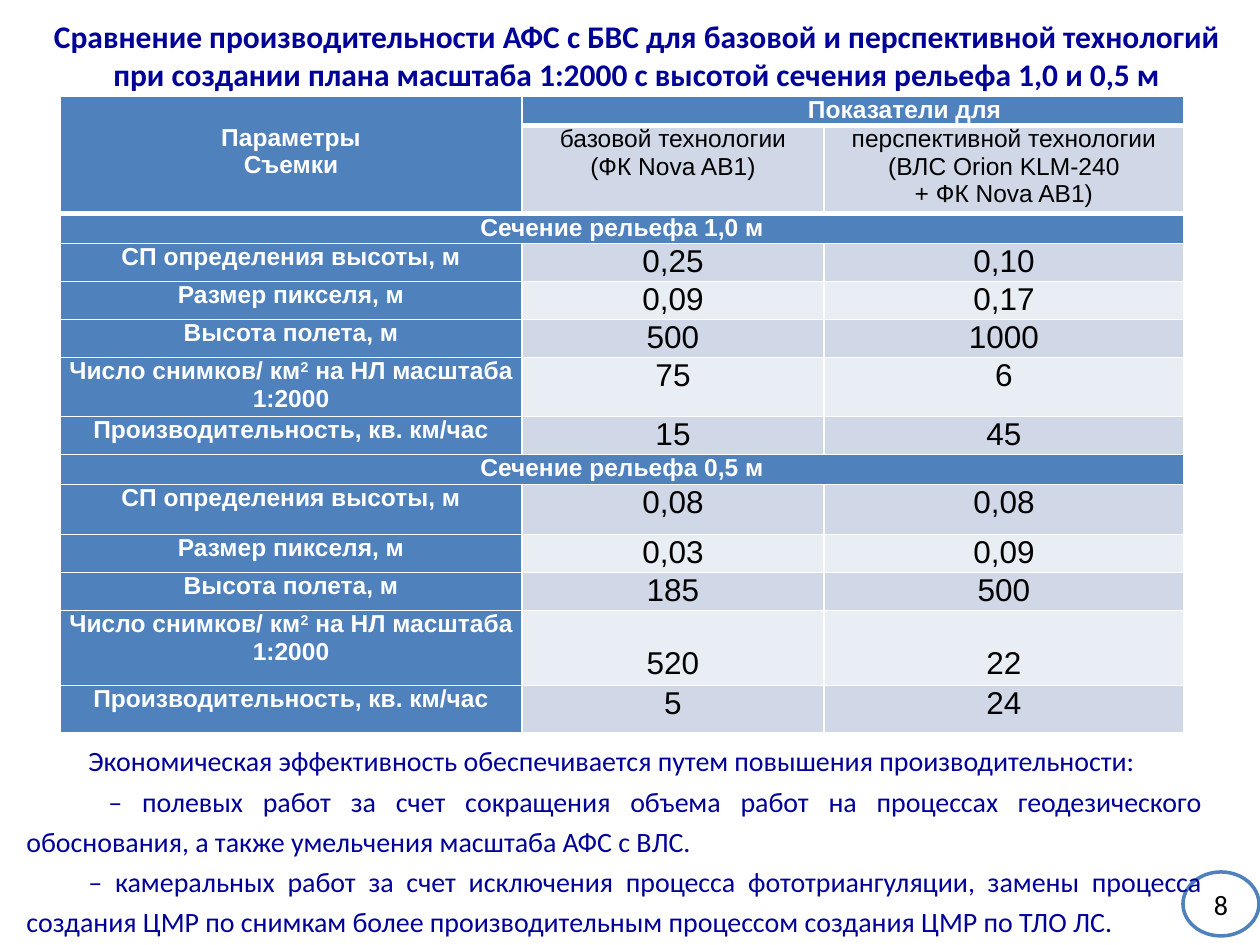
import dataclasses
import typing

import lxml.etree
import pptx
import pptx.dml.color
import pptx.enum.shapes
import pptx.enum.text
import pptx.oxml.ns
import pptx.util

PX_PER_INCH = 126
ALIGN = pptx.enum.text.PP_ALIGN
ANCHOR = pptx.enum.text.MSO_ANCHOR


@dataclasses.dataclass(frozen=True)
class Theme:
    navy: str = "000099"
    blue: str = "4F81BD"
    band_dark: str = "D0D8E8"
    band_light: str = "E9EDF4"
    white: str = "FFFFFF"
    black: str = "000000"
    text_font: str = "Calibri"
    table_font: str = "Arial"
    title_size: int = 18
    body_size: int = 16
    label_size: int = 14
    value_size: int = 18


THEME = Theme()


class Area(typing.NamedTuple):
    left: int
    top: int
    width: int
    height: int


@dataclasses.dataclass(frozen=True)
class Measure:
    """One table row: a parameter and its value for each technology."""
    label: str
    base: str
    advanced: str
    height: int = 38
    value_top: int = 0


@dataclasses.dataclass(frozen=True)
class Section:
    title: str
    measures: tuple[Measure, ...]
    height: int = 30


ACCURACY = "СП определения высоты, м"
PIXEL = "Размер пикселя, м"
ALTITUDE = "Высота полета, м"
IMAGES = "Число снимков/ км^2^ на НЛ масштаба 1:2000"
OUTPUT = "Производительность, кв. км/час"

SECTIONS = (
    Section("Сечение рельефа 1,0 м", (
        Measure(ACCURACY, "0,25", "0,10"),
        Measure(PIXEL, "0,09", "0,17"),
        Measure(ALTITUDE, "500", "1000"),
        Measure(IMAGES, "75", "6", height=58),
        Measure(OUTPUT, "15", "45"),
    )),
    Section("Сечение рельефа 0,5 м", (
        Measure(ACCURACY, "0,08", "0,08", height=50),
        Measure(PIXEL, "0,03", "0,09"),
        Measure(ALTITUDE, "185", "500"),
        Measure(IMAGES, "520", "22", height=75, value_top=35),
        Measure(OUTPUT, "5", "24", height=47),
    )),
)
HEADER_HEIGHTS = (29, 88)
COLUMN_WIDTHS = (462, 302, 360)
TABLE_LEFT, TABLE_TOP = 60, 96

TITLE = ("Сравнение производительности АФС с БВС для базовой и перспективной технологий "
         "при создании плана масштаба 1:2000 с высотой сечения рельефа 1,0 и 0,5 м")
CONCLUSION = "\n".join((
    "Экономическая эффективность обеспечивается путем повышения производительности:",
    "– полевых работ за счет сокращения объема работ на процессах геодезического "
    "обоснования, а также умельчения масштаба АФС с ВЛС.",
    "– камеральных работ за счет исключения процесса фототриангуляции, замены процесса "
    "создания ЦМР по снимкам более производительным процессом создания ЦМР по ТЛО ЛС.",
))


def px(length: int) -> int:
    return round(length * pptx.util.Inches(1) / PX_PER_INCH)


def rgb(value: str) -> pptx.dml.color.RGBColor:
    return pptx.dml.color.RGBColor.from_string(value)


def write(frame, text: str, *, size: int, color: str, font: str = THEME.text_font,
          bold: bool = False, align=ALIGN.CENTER, spacing: float = 1.0,
          indents: tuple[int, ...] = ()) -> None:
    """Fill a frame, one paragraph a line; text between ^ marks is superscript."""
    frame.word_wrap = True
    for number, line in enumerate(text.split("\n")):
        para = frame.add_paragraph() if number else frame.paragraphs[0]
        para.alignment, para.line_spacing = align, spacing
        if indents:
            para._p.get_or_add_pPr().set("indent", str(px(indents[number])))
        for part, content in enumerate(line.split("^")):
            span = para.add_run()
            span.text = content
            span.font.size = pptx.util.Pt(size)
            span.font.name, span.font.bold = font, bold
            span.font.color.rgb = rgb(color)
            if part % 2:
                span._r.get_or_add_rPr().set("baseline", "30000")


def add_text(page, area: Area, text: str, **text_format) -> None:
    box = page.shapes.add_textbox(*map(px, area))
    write(box.text_frame, text, **text_format)


def add_page_number(page, area: Area, number: str) -> None:
    oval = page.shapes.add_shape(pptx.enum.shapes.MSO_SHAPE.OVAL, *map(px, area))
    oval.shadow.inherit = False
    oval.fill.solid()
    oval.fill.fore_color.rgb = rgb(THEME.white)
    oval.line.color.rgb = rgb(THEME.blue)
    oval.line.width = pptx.util.Pt(2)
    oval.text_frame.vertical_anchor = ANCHOR.MIDDLE
    write(oval.text_frame, number, size=THEME.body_size, color=THEME.black)


def style_cell(cell, fill: str, bottom: int = 1) -> None:
    """Set white borders, narrow margins and a solid fill."""
    properties = cell._tc.get_or_add_tcPr()
    for side, points in (("L", 1), ("R", 1), ("T", 1), ("B", bottom)):
        border = lxml.etree.SubElement(properties, pptx.oxml.ns.qn(f"a:ln{side}"),
                                       w=str(pptx.util.Pt(points)))
        paint = lxml.etree.SubElement(border, pptx.oxml.ns.qn("a:solidFill"))
        lxml.etree.SubElement(paint, pptx.oxml.ns.qn("a:srgbClr"), val=THEME.white)
    cell.margin_left = cell.margin_right = px(8)
    cell.margin_top = cell.margin_bottom = 0
    cell.fill.solid()
    cell.fill.fore_color.rgb = rgb(fill)


def write_label(cell, text: str, **text_format) -> None:
    write(cell.text_frame, text, size=THEME.label_size, color=THEME.white,
          font=THEME.table_font, bold=True, **text_format)


def fill_header(table) -> None:
    for column in range(3):
        style_cell(table.cell(0, column), THEME.blue, bottom=3)
        style_cell(table.cell(1, column), THEME.band_dark if column else THEME.blue,
                   bottom=1 if column else 3)
    corner, group = table.cell(0, 0), table.cell(0, 1)
    corner.merge(table.cell(1, 0))
    group.merge(table.cell(0, 2))
    corner.margin_top = px(28)
    write_label(corner, "Параметры\nСъемки")
    group.margin_left = px(286)
    write_label(group, "Показатели для", align=ALIGN.LEFT)
    technologies = ("базовой технологии\n(ФК Nova AB1)",
                    "перспективной технологии\n(ВЛС Orion KLM-240\n+ ФК Nova AB1)")
    for column, text in enumerate(technologies, 1):
        write(table.cell(1, column).text_frame, text, size=THEME.label_size,
              color=THEME.black, font=THEME.table_font)


def fill_section(table, first_row: int, section: Section) -> None:
    for column in range(3):
        style_cell(table.cell(first_row, column), THEME.blue)
    heading = table.cell(first_row, 0)
    heading.merge(table.cell(first_row, 2))
    write_label(heading, section.title)
    for number, measure in enumerate(section.measures):
        label, *values = table.rows[first_row + 1 + number].cells
        style_cell(label, THEME.blue)
        write_label(label, measure.label)
        for cell, text in zip(values, (measure.base, measure.advanced)):
            style_cell(cell, THEME.band_light if number % 2 else THEME.band_dark)
            cell.margin_top = px(measure.value_top)
            write(cell.text_frame, text, size=THEME.value_size, color=THEME.black,
                  font=THEME.table_font)


def add_comparison(page) -> None:
    heights = list(HEADER_HEIGHTS)
    for section in SECTIONS:
        heights += [section.height, *(measure.height for measure in section.measures)]
    area = Area(TABLE_LEFT, TABLE_TOP, sum(COLUMN_WIDTHS), sum(heights))
    table = page.shapes.add_table(len(heights), len(COLUMN_WIDTHS), *map(px, area)).table
    table.first_row = table.horz_banding = False
    for column, width in zip(table.columns, COLUMN_WIDTHS):
        column.width = px(width)
    for row, height in zip(table.rows, heights):
        row.height = px(height)
    fill_header(table)
    first_row = len(HEADER_HEIGHTS)
    for section in SECTIONS:
        fill_section(table, first_row, section)
        first_row += 1 + len(section.measures)


def main() -> None:
    deck = pptx.Presentation()
    deck.slide_width, deck.slide_height = px(1260), px(945)
    page = deck.slides.add_slide(deck.slide_layouts[6])
    add_page_number(page, Area(1183, 872, 76, 64), "8")
    add_text(page, Area(29, 11, 1216, 89), TITLE, size=THEME.title_size,
             color=THEME.navy, bold=True)
    add_text(page, Area(14, 731, 1201, 217), CONCLUSION, size=THEME.body_size,
             color=THEME.navy, align=ALIGN.JUSTIFY, spacing=1.2, indents=(62, 82, 62))
    add_comparison(page)
    deck.save("out.pptx")


if __name__ == "__main__":
    main()
